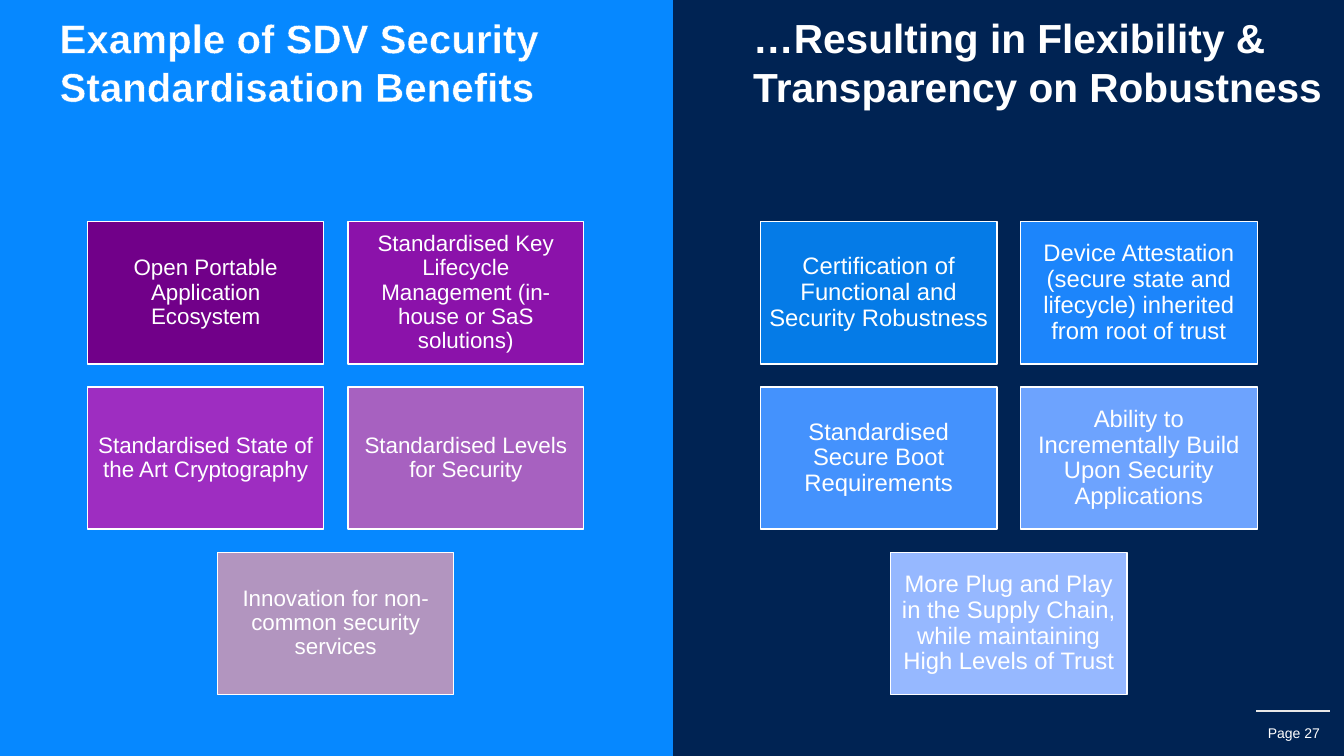
from dataclasses import dataclass

from lxml import etree
from pptx import Presentation
from pptx.dml.color import RGBColor
from pptx.enum import shapes, text
from pptx.oxml import ns
from pptx.util import Inches, Pt


@dataclass(frozen=True)
class Theme:
    font: str = "Arial"
    navy: str = "002353"
    blue: str = "0688FF"
    white: str = "FFFFFF"
    rule: str = "E8E7E7"
    title: float = 28.8
    heading: float = 29
    page: float = 10


@dataclass(frozen=True)
class Card:
    label: str
    fill: str


@dataclass(frozen=True)
class CardGrid:
    left: float
    width: float
    size: float
    cards: tuple[Card, ...]


THEME = Theme()
TOP, HEIGHT = 2.2, 1.41
COLUMN_STEP, ROW_STEP = 2.58, 1.64
COLUMNS = 2

GRIDS = (
    CardGrid(0.87, 2.34, 16, (
        Card("Open Portable Application Ecosystem", "710089"),
        Card("Standardised Key Lifecycle Management (in-house or SaS solutions)", "8B12AA"),
        Card("Standardised State of the Art Cryptography", "9E2DC1"),
        Card("Standardised Levels for Security", "A761C0"),
        Card("Innovation for non-common security services", "B295BF"),
    )),
    CardGrid(7.54, 2.35, 17, (
        Card("Certification of Functional and Security Robustness", "057BE7"),
        Card("Device Attestation (secure state and lifecycle) inherited from root of trust", "1C85FB"),
        Card("Standardised Secure Boot Requirements", "4492FD"),
        Card("Ability to Incrementally Build Upon Security Applications", "6DA3FE"),
        Card("More Plug and Play in the Supply Chain, while maintaining High Levels of Trust", "96B8FF"),
    )),
)


def rgb(value: str) -> RGBColor:
    return RGBColor.from_string(value)


def set_text(sp, label: str, size: float, align, anchor, inset: float = 0,
             bold: bool = False, spacing: float = 1.0):
    tf = sp.text_frame
    tf.text = label
    tf.word_wrap = True
    tf.auto_size = text.MSO_AUTO_SIZE.NONE
    tf.vertical_anchor = anchor
    tf.margin_left = tf.margin_right = tf.margin_top = tf.margin_bottom = Inches(inset)
    p = tf.paragraphs[0]
    p.alignment = align
    p.line_spacing = spacing
    p.space_before = Pt(0)
    r = p.runs[0]
    r.font.name = THEME.font
    r.font.size = Pt(size)
    r.font.bold = bold
    r.font.color.rgb = rgb(THEME.white)
    return p


def add_box(s, left: float, top: float, width: float, height: float, fill: str, line: str):
    sp = s.shapes.add_shape(shapes.MSO_SHAPE.RECTANGLE, Inches(left), Inches(top),
                            Inches(width), Inches(height))
    sp.shadow.inherit = False
    sp.fill.solid()
    sp.fill.fore_color.rgb = rgb(fill)
    sp.line.color.rgb = rgb(line)
    sp.line.width = Pt(1)
    return sp


def add_grid(s, grid: CardGrid) -> None:
    for i, card in enumerate(grid.cards):
        row, column = divmod(i, COLUMNS)
        in_row = min(COLUMNS, len(grid.cards) - row * COLUMNS)
        left = grid.left + (column + (COLUMNS - in_row) / 2) * COLUMN_STEP
        sp = add_box(s, left, TOP + row * ROW_STEP, grid.width, HEIGHT, card.fill, THEME.white)
        set_text(sp, card.label, grid.size, text.PP_ALIGN.CENTER, text.MSO_ANCHOR.MIDDLE,
                 inset=0.07, spacing=0.9)


def fill_heading(sp, label: str, left: float, width: float, size: float):
    sp.left, sp.top, sp.width, sp.height = map(Inches, (left, 0.13, width, 0.45))
    return set_text(sp, label, size, text.PP_ALIGN.LEFT, text.MSO_ANCHOR.TOP, bold=True)


def outline_text(r, color: str, width: float) -> None:
    ln = etree.Element(ns.qn("a:ln"), w=str(Pt(width)))
    fill = etree.SubElement(ln, ns.qn("a:solidFill"))
    etree.SubElement(fill, ns.qn("a:srgbClr"), val=color)
    r.font._element.insert(0, ln)


def add_page_mark(s) -> None:
    rule = s.shapes.add_connector(shapes.MSO_CONNECTOR.STRAIGHT, Inches(12.46), Inches(7.05),
                                  Inches(13.19), Inches(7.05))
    rule.line.color.rgb = rgb(THEME.rule)
    rule.line.width = Pt(1.5)
    etree.SubElement(rule.element.spPr, ns.qn("a:effectLst"))
    tb = s.shapes.add_textbox(Inches(12.22), Inches(7.19), Inches(0.87), Inches(0.2))
    set_text(tb, "Page 27", THEME.page, text.PP_ALIGN.RIGHT, text.MSO_ANCHOR.TOP)


def main() -> None:
    prs = Presentation()
    prs.slide_width, prs.slide_height = Inches(13.33), Inches(7.5)
    s = prs.slides.add_slide(prs.slide_layouts[1])
    s.background.fill.solid()
    s.background.fill.fore_color.rgb = rgb(THEME.navy)

    title, body = s.shapes.title, s.placeholders[1]
    panel = add_box(s, 0, 0, 6.67, 7.5, THEME.blue, THEME.blue)
    title.element.addprevious(panel.element)

    p = fill_heading(title, "Example of SDV Security Standardisation Benefits",
                     0.59, 5.07, THEME.title)
    outline_text(p.runs[0], THEME.blue, 0.75)

    p = fill_heading(body, "…Resulting in Flexibility & Transparency on Robustness",
                     7.47, 5.7, THEME.heading)
    pPr = p._p.get_or_add_pPr()
    pPr.set("marL", "0")
    pPr.set("indent", "0")
    etree.SubElement(pPr, ns.qn("a:buNone"))

    for grid in GRIDS:
        add_grid(s, grid)
    add_page_mark(s)
    prs.save("out.pptx")


if __name__ == "__main__":
    main()
